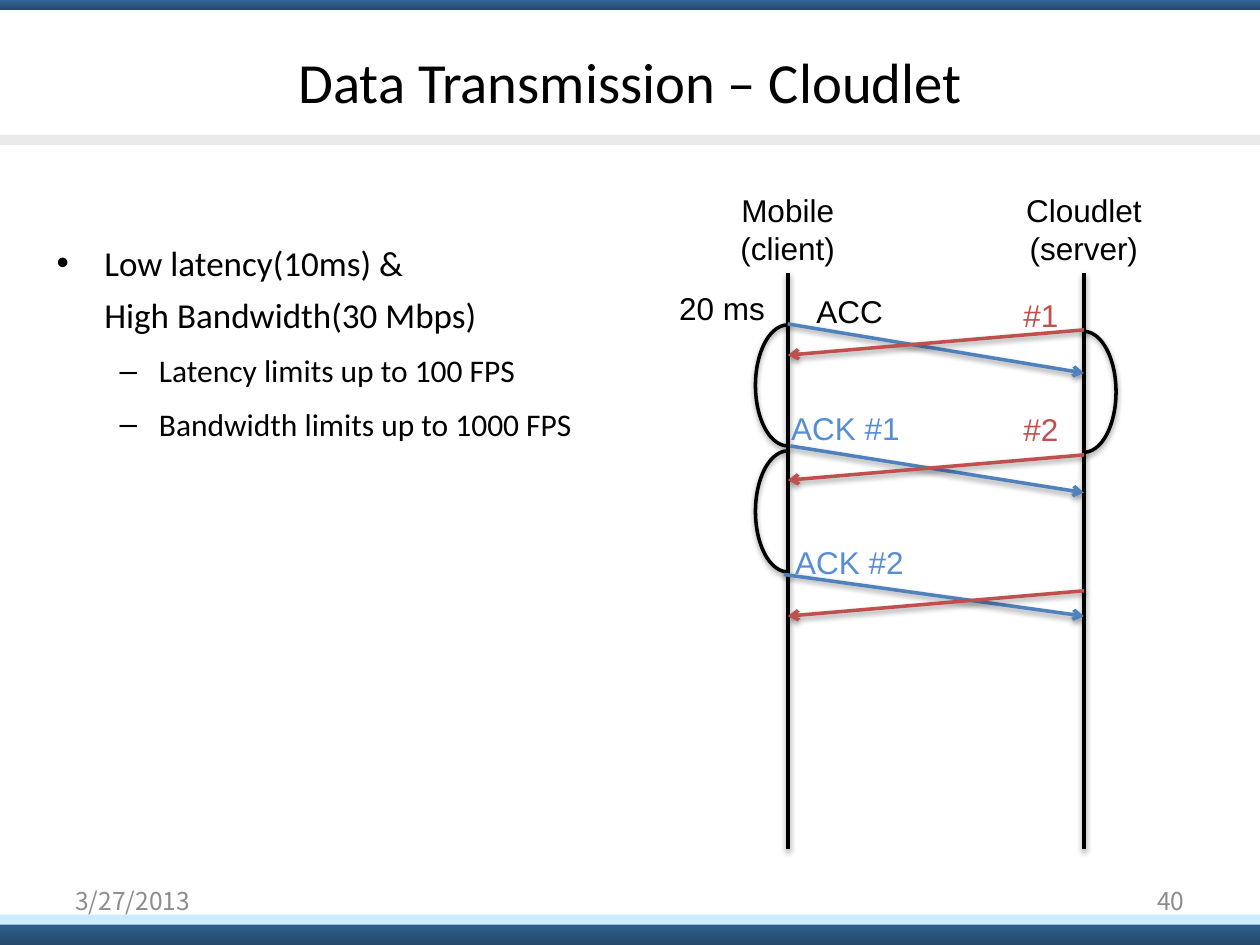
from lxml import etree
from pptx import Presentation
from pptx.dml.color import RGBColor
from pptx.enum.shapes import MSO_CONNECTOR, MSO_SHAPE
from pptx.enum.text import MSO_ANCHOR, MSO_AUTO_SIZE, PP_ALIGN
from pptx.oxml.ns import qn
from pptx.util import Cm, Pt

STRAIGHT = MSO_CONNECTOR.STRAIGHT
RECTANGLE, ARC = MSO_SHAPE.RECTANGLE, MSO_SHAPE.ARC
LEFT, CENTER, RIGHT = PP_ALIGN.LEFT, PP_ALIGN.CENTER, PP_ALIGN.RIGHT
TOP, MIDDLE = MSO_ANCHOR.TOP, MSO_ANCHOR.MIDDLE
NO_FIT = MSO_AUTO_SIZE.NONE

COLORS = {
    "black": "000000", "navy": "336699", "deep": "24496D", "sky": "CCECFF",
    "rule": "EAEAEA", "request": "4F81BD", "reply": "C0504D",
    "ack": "558ED5", "footer": "8C8C8C",
}


def rgb(name):
    """Return the named colour."""
    return RGBColor.from_string(COLORS[name])


def place(shape, box):
    """Move and size a shape to a box in centimetres."""
    shape.left, shape.top, shape.width, shape.height = map(Cm, box)


def style_font(para, size, color, name):
    """Set the font of a paragraph."""
    para.font.size, para.font.name = Pt(size), name
    para.font.color.rgb = rgb(color)


def add_label(page, box, text, color="black", size=18, name="Arial",
              align=LEFT, anchor=TOP, wrap=False):
    """Add a one-paragraph text box."""
    frame = page.shapes.add_textbox(*map(Cm, box)).text_frame
    frame.word_wrap, frame.vertical_anchor = wrap, anchor
    para = frame.paragraphs[0]
    para.text, para.alignment = text, align
    style_font(para, size, color, name)


def style_stroke(shape, color):
    """Give a line or arc its stroke and soft shadow."""
    shape.line.color.rgb, shape.line.width = rgb(color), Pt(2)
    effects = etree.SubElement(shape._element.spPr, qn("a:effectLst"))
    shadow = etree.SubElement(effects, qn("a:outerShdw"), blurRad="40000",
                              dist="20000", dir="5400000", rotWithShape="0")
    tint = etree.SubElement(shadow, qn("a:srgbClr"), val=COLORS["black"])
    etree.SubElement(tint, qn("a:alpha"), val="38000")


def add_line(page, start, end, color, arrow=False):
    """Add a straight line, with an arrowhead at its end if asked."""
    line = page.shapes.add_connector(STRAIGHT, *map(Cm, start + end))
    style_stroke(line, color)
    if arrow:
        etree.SubElement(line.line._get_or_add_ln(), qn("a:tailEnd"), type="arrow")


def add_half_loop(page, x, y, flipped):
    """Add a half ellipse that bulges away from a lifeline."""
    width, height = 1.3, 2.44
    arc = page.shapes.add_shape(ARC, Cm(x - width / 2), Cm(y), Cm(width), Cm(height))
    arc.adjustments[0], arc.adjustments[1] = 162, 53.9
    arc.fill.background()
    style_stroke(arc, "black")
    if flipped:
        arc._element.spPr.find(qn("a:xfrm")).set("flipH", "1")


def add_bars(page, box):
    """Draw the coloured bars at the edges and under the title."""
    left, top, width, height = box
    bars = [(18.49, 0.64, ("navy", "deep")), (18.44, 0.2, ("sky",)),
            (2.72, 0.2, ("rule",)), (0, 0.2, ("navy", "deep"))]
    for y, thickness, colors in bars:
        bar = page.shapes.add_shape(RECTANGLE, Cm(left), Cm(top + y), Cm(width),
                                    Cm(min(thickness, height - y)))
        bar.shadow.inherit = False
        bar.line.fill.background()
        if len(colors) == 1:
            bar.fill.solid()
            bar.fill.fore_color.rgb = rgb(colors[0])
        else:
            bar.fill.gradient()
            bar.fill.gradient_angle = 270
            for stop, color in zip(bar.fill.gradient_stops, colors):
                stop.color.rgb = rgb(color)
    order = page.shapes._spTree
    for offset, bar in enumerate(list(page.shapes)[-len(bars):]):
        order.insert(2 + offset, bar._element)


def fill_title(page, box):
    """Fill the title placeholder."""
    title = page.shapes.title
    place(title, box)
    frame = title.text_frame
    frame.auto_size, frame.vertical_anchor = NO_FIT, MIDDLE
    para = frame.paragraphs[0]
    para.text, para.alignment = "Data Transmission – Cloudlet", CENTER
    style_font(para, 32.4, "black", "Calibri")


def fill_body(page, box):
    """Fill the bulleted list."""
    body = page.placeholders[1]
    place(body, box)
    frame = body.text_frame
    frame.auto_size = NO_FIT
    items = [("Low latency(10ms) & \vHigh Bandwidth(30 Mbps)", 0),
             ("Latency limits up to 100 FPS", 1),
             ("Bandwidth limits up to 1000 FPS", 1)]
    levels = [(20, "•", 0.96, 0.96), (18, "–", 2.06, 0.79)]
    for index, (text, level) in enumerate(items):
        para = frame.add_paragraph() if index else frame.paragraphs[0]
        size, bullet, margin, hang = levels[level]
        para.text, para.level, para.alignment = text, level, LEFT
        para.line_spacing, para.space_before = 1.25, Pt(size * 0.2)
        style_font(para, size, "black", "Calibri")
        props = para._p.get_or_add_pPr()
        props.set("marL", str(Cm(margin)))
        props.set("indent", str(-Cm(hang)))
        mark = etree.Element(qn("a:buChar"), char=bullet)
        props.find(qn("a:defRPr")).addprevious(mark)


def add_sequence(page, box):
    """Draw the message sequence between the two lifelines that bound the box."""
    left, top, width, height = box
    right = left + width
    for x, text, label_width in [(left, "Mobile\v(client)", 2.51),
                                 (right, "Cloudlet\v(server)", 2.95)]:
        add_line(page, (x, top), (x, top + height), "black")
        add_label(page, (x - label_width / 2, top - 1.78, label_width, 1.8),
                  text, align=CENTER)
    for x, y, flipped in [(left, 1.04, True), (left, 3.58, True), (right, 1.17, False)]:
        add_half_loop(page, x, top + y, flipped)
    for shift, start, end in [(0, 1.02, 2.01), (0.05, 3.48, 4.42), (-0.08, 6.07, 6.91)]:
        add_line(page, (left + shift, top + start), (right, top + end), "request", True)
    for start in (1.14, 3.66, 6.4):
        add_line(page, (right, top + start), (left, top + start + 0.51), "reply", True)
    labels = [("20 ms", -2.44, 0.2, 2.26, "black"), ("ACC", 0.33, 0.25, 1.85, "black"),
              ("#1", 4.5, 0.33, 1.22, "reply"), ("#2", 4.5, 2.64, 1.22, "reply"),
              ("ACK #1", -0.18, 2.62, 2.72, "ack"), ("ACK #2", -0.1, 5.31, 2.72, "ack")]
    for text, x, y, label_width, color in labels:
        add_label(page, (left + x, top + y, label_width, 1.02), text, color)


def add_footer(page, box):
    """Write the date and the page number at the two ends of the box."""
    left, top, width, height = box
    part = 5.92
    for x, text, align in [(left, "3/27/2013", LEFT), (left + width - part, "40", RIGHT)]:
        add_label(page, (x, top, part, height), text, "footer", 14,
                  "Noto Sans CJK KR", align, MIDDLE, True)


def main():
    """Build and save the deck."""
    deck = Presentation()
    deck.slide_width, deck.slide_height = Cm(25.4), Cm(19.05)
    page = deck.slides.add_slide(deck.slide_layouts[1])
    add_bars(page, (0, 0, 25.4, 19.05))
    fill_title(page, (1.27, 0.76, 22.86, 1.75))
    fill_body(page, (0.89, 4.52, 11.61, 13.79))
    add_sequence(page, (15.88, 5.51, 5.97, 11.61))
    add_footer(page, (1.27, 17.65, 22.86, 1.02))
    deck.save("out.pptx")


if __name__ == "__main__":
    main()
